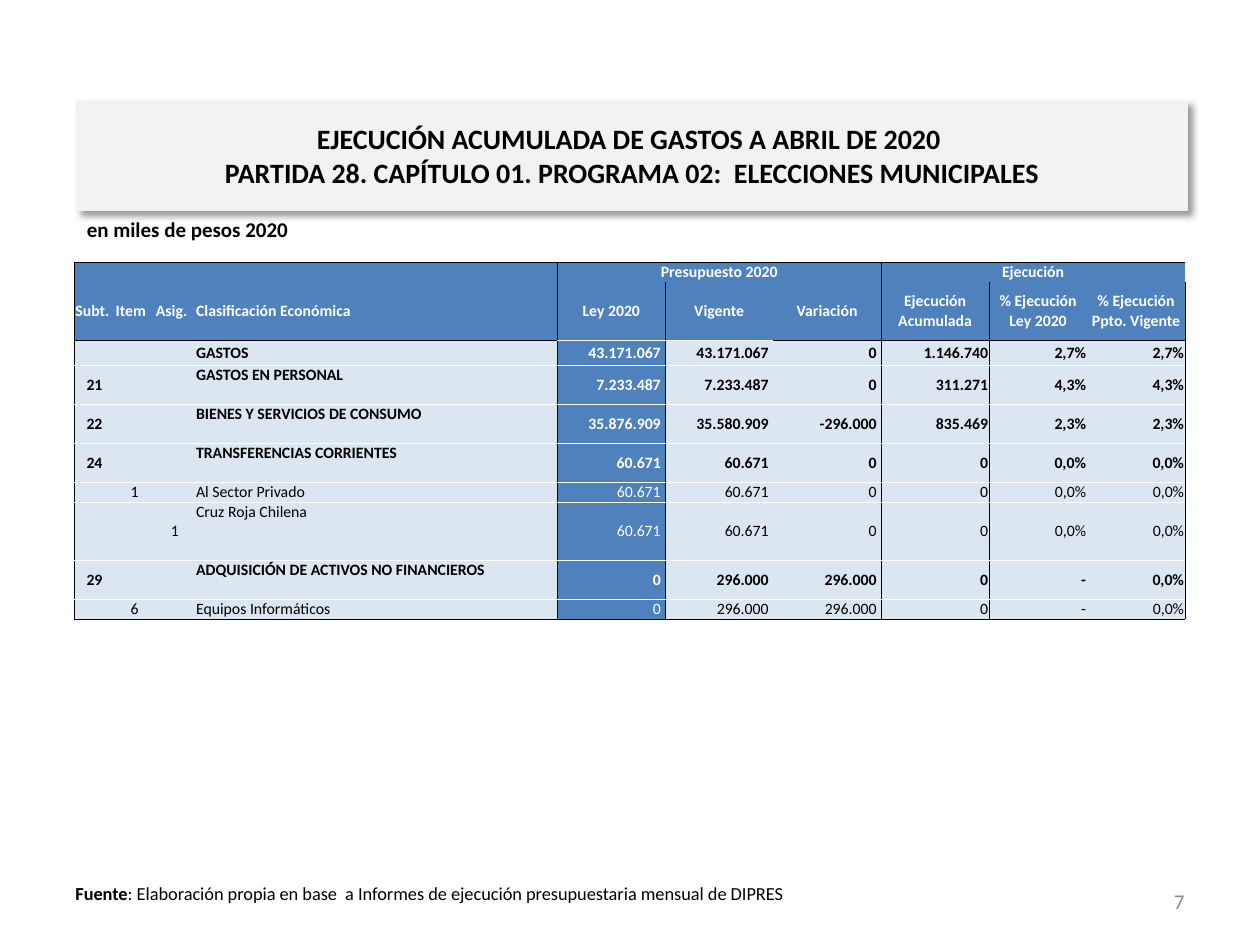
from lxml import etree
from pptx import Presentation
from pptx.dml.color import RGBColor
from pptx.enum.text import MSO_ANCHOR, MSO_AUTO_SIZE, PP_ALIGN
from pptx.oxml.ns import qn
from pptx.util import Pt

LEFT, CENTER, RIGHT = PP_ALIGN.LEFT, PP_ALIGN.CENTER, PP_ALIGN.RIGHT
TOP, MIDDLE, BOTTOM = MSO_ANCHOR.TOP, MSO_ANCHOR.MIDDLE, MSO_ANCHOR.BOTTOM
NO_AUTOFIT = MSO_AUTO_SIZE.NONE

BLACK = RGBColor(0x00, 0x00, 0x00)
WHITE = RGBColor(0xFF, 0xFF, 0xFF)
GRAY = RGBColor(0x8C, 0x8C, 0x8C)
PANEL = RGBColor(0xF2, 0xF2, 0xF2)
BLUE = RGBColor(0x4F, 0x81, 0xBD)
PALE_BLUE = RGBColor(0xDC, 0xE6, 0xF1)

FONT = "Calibri"
PLAIN_STYLE = "{2D5ABB26-0587-4C30-8999-92F81FD0307C}"

TITLE_LINES = [
    "EJECUCIÓN ACUMULADA DE GASTOS A ABRIL DE 2020 ",
    "PARTIDA 28. CAPÍTULO 01. PROGRAMA 02:  ELECCIONES MUNICIPALES",
]
GROUPS = {4: "Presupuesto 2020", 7: "Ejecución"}
HEADINGS = [
    "Subt.", "Item", "Asig.", "Clasificación Económica", "Ley 2020", "Vigente",
    "Variación", "Ejecución Acumulada", "% Ejecución Ley 2020",
    "% Ejecución Ppto. Vigente",
]
BUDGET = [
    ["", "", "", "GASTOS", "43.171.067", "43.171.067", "0", "1.146.740", "2,7%", "2,7%"],
    ["21", "", "", "GASTOS EN PERSONAL", "7.233.487", "7.233.487", "0", "311.271", "4,3%", "4,3%"],
    ["22", "", "", "BIENES Y SERVICIOS DE CONSUMO", "35.876.909", "35.580.909", "-296.000",
     "835.469", "2,3%", "2,3%"],
    ["24", "", "", "TRANSFERENCIAS CORRIENTES", "60.671", "60.671", "0", "0", "0,0%", "0,0%"],
    ["", "1", "", "Al Sector Privado", "60.671", "60.671", "0", "0", "0,0%", "0,0%"],
    ["", "", "1", "Cruz Roja Chilena", "60.671", "60.671", "0", "0", "0,0%", "0,0%"],
    ["29", "", "", "ADQUISICIÓN DE ACTIVOS NO FINANCIEROS", "0", "296.000", "296.000",
     "0", "-", "0,0%"],
    ["", "6", "", "Equipos Informáticos", "0", "296.000", "296.000", "0", "-", "0,0%"],
]
COLUMN_WIDTHS = [23] * 3 + [207] + [61.7] * 4 + [56] * 2
LINE_HEIGHT = 11.15
ROW_LINES = [1, 3, 1.3, 2, 2, 2, 1, 3, 2, 1]
NAME, LAW = 3, 4
PADDED = (4, 5, 6)
RULED_EDGES = (0, 4, 7, 10)


def add_run(paragraph, text, size, color=BLACK, bold=False):
    run = paragraph.add_run()
    run.text = text
    run.font.name = FONT
    run.font.size = Pt(size)
    run.font.bold = bold
    run.font.color.rgb = color


def add_title(slide):
    title = slide.shapes.title
    title.left, title.top, title.width, title.height = Pt(43.7), Pt(57.8), Pt(635), Pt(62.2)
    title.fill.solid()
    title.fill.fore_color.rgb = PANEL
    title.line.color.rgb = PANEL
    title.line.width = Pt(0.75)
    effects = etree.SubElement(title.element.spPr, qn("a:effectLst"))
    shadow = etree.SubElement(
        effects, qn("a:outerShdw"), blurRad=str(Pt(4)), dist=str(Pt(3)),
        dir="2700000", algn="tl", rotWithShape="0")
    tint = etree.SubElement(shadow, qn("a:srgbClr"), val=str(BLACK))
    etree.SubElement(tint, qn("a:alpha"), val="40000")
    frame = title.text_frame
    frame.auto_size = NO_AUTOFIT
    frame.word_wrap = True
    frame.vertical_anchor = MIDDLE
    heading = frame.paragraphs[0]
    heading.alignment = CENTER
    add_run(heading, TITLE_LINES[0], 16, bold=True)
    heading.add_line_break()
    add_run(heading, TITLE_LINES[1], 16, bold=True)


def add_text(slide, box, runs, size, color=BLACK, align=LEFT, anchor=TOP):
    frame = slide.shapes.add_textbox(*map(Pt, box)).text_frame
    frame.word_wrap = True
    frame.vertical_anchor = anchor
    paragraph = frame.paragraphs[0]
    paragraph.alignment = align
    for text, bold in runs:
        add_run(paragraph, text, size, color, bold)


def add_border(cell, side, color):
    border = etree.SubElement(
        cell._tc.get_or_add_tcPr(), qn(f"a:ln{side}"), w=str(Pt(0.5)))
    fill = etree.SubElement(border, qn("a:solidFill"))
    etree.SubElement(fill, qn("a:srgbClr"), val=str(color))


def rule_color(edge, column):
    if edge == 1:
        return None
    if edge == 2:
        return WHITE if column in (4, 5) else BLACK
    return BLACK if edge in (0, len(ROW_LINES)) else WHITE


def format_cell(cell, row, column, fill):
    if column in RULED_EDGES:
        add_border(cell, "L", BLACK)
    if column + 1 in RULED_EDGES:
        add_border(cell, "R", BLACK)
    for side, edge in (("T", row), ("B", row + 1)):
        color = rule_color(edge, column)
        if color is not None:
            add_border(cell, side, color)
    cell.fill.solid()
    cell.fill.fore_color.rgb = fill
    cell.margin_left = cell.margin_right = Pt(0.6)
    cell.margin_top = Pt(0.2)
    cell.margin_bottom = Pt(0)


def fill_cell(cell, text, color, bold, align, anchor=MIDDLE):
    cell.vertical_anchor = anchor
    paragraph = cell.text_frame.paragraphs[0]
    paragraph.alignment = align
    if text:
        add_run(paragraph, text, 9, color, bold)
    else:
        etree.SubElement(paragraph._p, qn("a:endParaRPr"), sz="900")


def add_header(table):
    for column, heading in enumerate(HEADINGS):
        group, label = table.cell(0, column), table.cell(1, column)
        format_cell(group, 0, column, BLUE)
        fill_cell(group, GROUPS.get(column, ""), WHITE, True, CENTER, BOTTOM)
        format_cell(label, 1, column, BLUE)
        fill_cell(label, heading, WHITE, True, CENTER if column > NAME else LEFT)
    for column in GROUPS:
        table.cell(0, column).merge(table.cell(0, column + 2))


def add_budget_row(table, row, values):
    bold = values[NAME].isupper()
    for column, value in enumerate(values):
        cell = table.cell(row, column)
        is_law = column == LAW
        format_cell(cell, row, column, BLUE if is_law else PALE_BLUE)
        if column in PADDED:
            cell.margin_right = Pt(2.6)
        align = CENTER if column < NAME else LEFT if column == NAME else RIGHT
        anchor = TOP if column == NAME and ROW_LINES[row] >= 2 else MIDDLE
        fill_cell(cell, value, WHITE if is_law else BLACK, bold, align, anchor)


def add_budget_table(slide):
    heights = [lines * LINE_HEIGHT for lines in ROW_LINES]
    table = slide.shapes.add_table(
        len(heights), len(COLUMN_WIDTHS), Pt(42.5), Pt(149.8),
        Pt(sum(COLUMN_WIDTHS)), Pt(sum(heights))).table
    table._tbl.tblPr.find(qn("a:tableStyleId")).text = PLAIN_STYLE
    for column, width in zip(table.columns, COLUMN_WIDTHS):
        column.width = Pt(width)
    for row, height in zip(table.rows, heights):
        row.height = Pt(height)
    add_header(table)
    for row, values in enumerate(BUDGET, start=2):
        add_budget_row(table, row, values)


def main():
    deck = Presentation()
    deck.slide_width, deck.slide_height = Pt(720), Pt(540)
    slide = deck.slides.add_slide(deck.slide_layouts[5])
    source = [
        ("Fuente", True),
        (": Elaboración propia en base  a Informes de ejecución presupuestaria mensual de DIPRES", False),
    ]
    add_text(slide, (36, 500.4, 425.5, 20.2), source, 10.5)
    add_title(slide)
    add_text(slide, (516.2, 500.4, 167.8, 28.8), [("7", False)], 12, GRAY, RIGHT, MIDDLE)
    add_text(slide, (42.5, 120.2, 634.3, 29.5), [("en miles de pesos 2020", True)], 12)
    add_budget_table(slide)
    deck.save("out.pptx")


if __name__ == "__main__":
    main()
